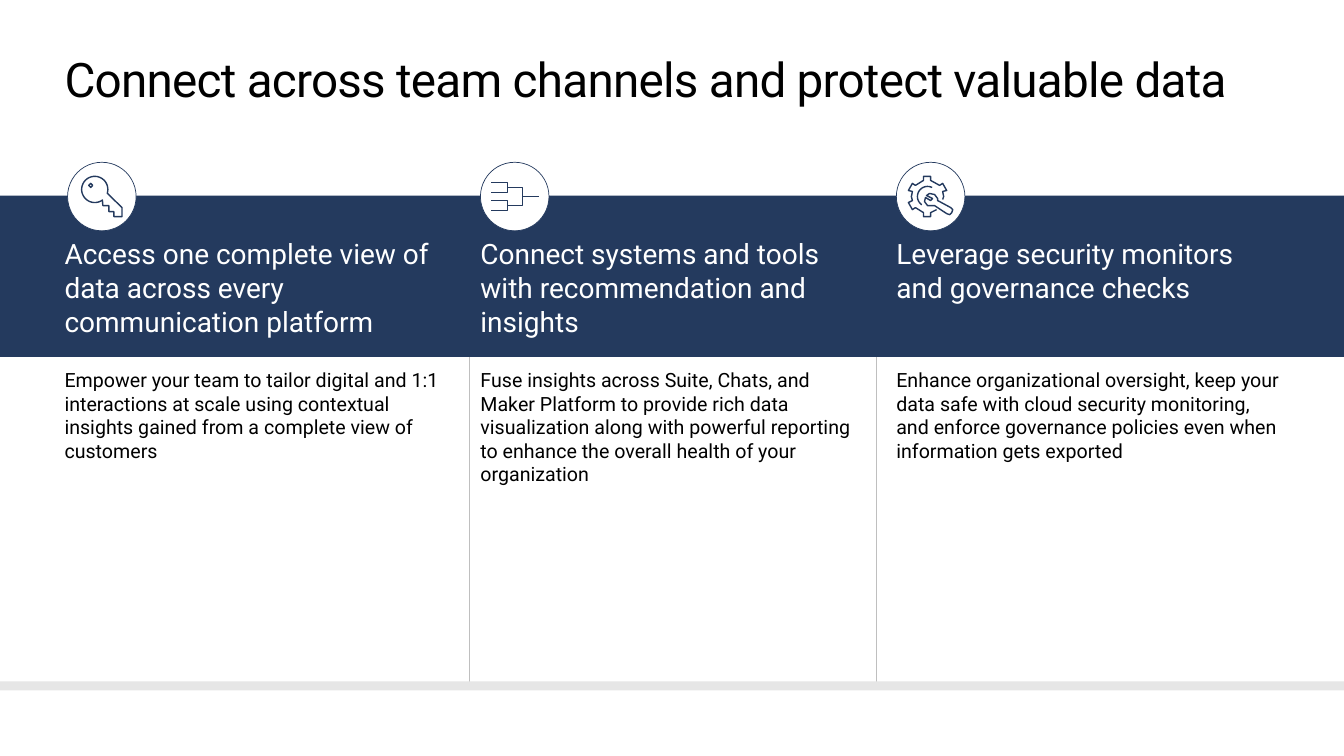
from math import cos, radians, sin

from lxml import etree
from pptx import Presentation
from pptx.dml.color import RGBColor
from pptx.enum.dml import MSO_LINE
from pptx.enum.shapes import MSO_CONNECTOR, MSO_SHAPE
from pptx.oxml.ns import qn
from pptx.util import Inches, Pt

RECTANGLE, OVAL = MSO_SHAPE.RECTANGLE, MSO_SHAPE.OVAL
STRAIGHT, DOTTED = MSO_CONNECTOR.STRAIGHT, MSO_LINE.ROUND_DOT

NAVY = RGBColor(0x24, 0x3A, 0x5E)
WHITE = RGBColor(0xFF, 0xFF, 0xFF)
BLACK = RGBColor(0, 0, 0)
PALE_GREY = RGBColor(0xE6, 0xE6, 0xE6)
RULE_GREY = RGBColor(0xBF, 0xBF, 0xBF)
FONT = "Roboto"

WIDTH, HEIGHT = 13.33, 7.5
MARGIN = 0.64
COLUMN_WIDTH = 3.8
COLUMN_PITCH = (8.89 - MARGIN) / 2
BAND_TOP, BAND_HEIGHT = 1.94, 1.6
FOOT_TOP, FOOT_HEIGHT = 6.76, 0.09
BADGE_TOP, BADGE_SIZE = 1.61, 0.68
HEADING_TOP, BODY_TOP = 2.35, 3.65
DIVIDER_TOP, DIVIDERS = 3.41, (4.65, 8.69)


def arc(x, y, radius, start, end, steps=40):
    """Return points along an arc, with angles in degrees."""
    angles = [radians(start + (end - start) * step / steps) for step in range(steps + 1)]
    return [(x + radius * cos(angle), y + radius * sin(angle)) for angle in angles]


KEY = [
    (arc(-0.07, -0.07, 0.13, 54, 377)
     + [(0.2, 0.11), (0.2, 0.2), (0.12, 0.2), (0.12, 0.15), (0.07, 0.15),
        (0.07, 0.09), (0.01, 0.09)], True),
    (arc(-0.11, -0.11, 0.02, 0, 270, 3), True),
]
FORK = [
    ([(-0.23, -0.14), (-0.07, -0.14), (-0.07, -0.04), (-0.23, -0.04)], False),
    ([(-0.23, 0.14), (-0.07, 0.14), (-0.07, 0.04), (-0.23, 0.04)], False),
    ([(-0.07, 0.09), (0.08, 0.09), (0.08, -0.09), (-0.07, -0.09)], False),
    ([(0.08, 0), (0.24, 0)], False),
]
GEAR = [
    ([(0.06, 0.13), (0, 0.16), (0, 0.2), (-0.07, 0.2), (-0.07, 0.16), (-0.15, 0.11),
      (-0.18, 0.13), (-0.22, 0.06), (-0.18, 0.04), (-0.19, 0), (-0.18, -0.05),
      (-0.22, -0.06), (-0.18, -0.13), (-0.15, -0.11), (-0.07, -0.16), (-0.07, -0.2),
      (0, -0.2), (0, -0.16), (0.09, -0.11), (0.12, -0.13), (0.16, -0.06),
      (0.12, -0.05), (0.13, 0), (0.12, 0.03)], False),
    (arc(-0.03, 0, 0.1, -63, -235), False),
    ([(0.04, 0.09), (0.16, 0.17), (0.19, 0.18), (0.21, 0.16), (0.22, 0.13),
      (0.2, 0.11), (0.07, 0.04), (0.07, 0.02), (0.04, -0.02), (-0.01, -0.03),
      (-0.04, -0.01), (0.02, 0.02), (0, 0.04), (-0.05, 0.01), (-0.06, 0.05),
      (-0.03, 0.09), (0.02, 0.09)], True),
]

TITLE = "Connect across team channels and protect valuable data"
COLUMNS = [
    ("Access one complete view of data across every communication platform",
     "Empower your team to tailor digital and 1:1 interactions at scale using "
     "contextual insights gained from a complete view of customers",
     KEY, 0.03),
    ("Connect systems and tools with recommendation and insights",
     "Fuse insights across Suite, Chats, and Maker Platform to provide rich data "
     "visualization along with powerful reporting to enhance the overall health "
     "of your organization",
     FORK, 0),
    ("Leverage security monitors and governance checks",
     "Enhance organizational oversight, keep your data safe with cloud security "
     "monitoring, and enforce governance policies even when information gets exported",
     GEAR, 0),
]


def add_text(page, left, top, width, height, text, size, color):
    """Add a wrapped text box without insets and return its paragraph."""
    box = page.shapes.add_textbox(Inches(left), Inches(top), Inches(width), Inches(height))
    frame = box.text_frame
    frame.word_wrap = True
    frame.margin_left = frame.margin_right = frame.margin_top = frame.margin_bottom = 0
    para = frame.paragraphs[0]
    para.text = text
    para.font.name, para.font.size = FONT, Pt(size)
    para.font.color.rgb = color
    return para


def add_block(page, preset, left, top, width, height, fill):
    """Add a filled shape without outline or shadow."""
    block = page.shapes.add_shape(
        preset, Inches(left), Inches(top), Inches(width), Inches(height))
    block.shadow.inherit = False
    block.fill.solid()
    block.fill.fore_color.rgb = fill
    block.line.fill.background()
    return block


def add_icon(page, x, y, strokes):
    """Draw strokes as one outline centred on a point."""
    builder = None
    for points, closed in strokes:
        places = [(Inches(x + dx), Inches(y + dy)) for dx, dy in points]
        if builder is None:
            builder = page.shapes.build_freeform(*places[0])
        else:
            builder.move_to(*places[0])
        builder.add_line_segments(places[1:], close=closed)
    icon = builder.convert_to_shape()
    icon.shadow.inherit = False
    icon.fill.background()
    icon.line.color.rgb = NAVY
    icon.line.width = Pt(1)


def add_badge(page, left, top, strokes):
    """Add a white disc holding an icon."""
    disc = add_block(page, OVAL, left, top, BADGE_SIZE, BADGE_SIZE, WHITE)
    disc.line.color.rgb = NAVY
    disc.line.width = Pt(0.5)
    add_icon(page, left + BADGE_SIZE / 2, top + BADGE_SIZE / 2, strokes)


def add_divider(page, x):
    """Add a dotted rule between two columns."""
    rule = page.shapes.add_connector(
        STRAIGHT, Inches(x), Inches(FOOT_TOP), Inches(x), Inches(DIVIDER_TOP))
    rule.line.color.rgb = RULE_GREY
    rule.line.width = Pt(0.25)
    rule.line.dash_style = DOTTED
    etree.SubElement(rule._element.spPr, qn("a:effectLst"))


def add_column(page, left, heading, body, strokes, badge_shift):
    """Add a heading, a body and a badge in one column."""
    add_text(page, left, HEADING_TOP, COLUMN_WIDTH, 1.01, heading, 20, WHITE)
    add_text(page, left, BODY_TOP, COLUMN_WIDTH, 2.53, body, 14, BLACK)
    add_badge(page, left + badge_shift, BADGE_TOP, strokes)


def main():
    """Build the slide and save it."""
    deck = Presentation()
    deck.slide_width, deck.slide_height = Inches(WIDTH), Inches(HEIGHT)
    page = deck.slides.add_slide(deck.slide_layouts[6])
    title = add_text(page, MARGIN, 0.5, WIDTH - 2 * MARGIN, 0.57, TITLE, 34, BLACK)
    title.runs[0].font._element.set("spc", "-50")
    for x in DIVIDERS:
        add_divider(page, x)
    add_block(page, RECTANGLE, 0, BAND_TOP, WIDTH, BAND_HEIGHT, NAVY)
    for index, column in enumerate(COLUMNS):
        add_column(page, MARGIN + index * COLUMN_PITCH, *column)
    add_block(page, RECTANGLE, 0, FOOT_TOP, WIDTH, FOOT_HEIGHT, PALE_GREY)
    deck.save("out.pptx")


if __name__ == "__main__":
    main()
